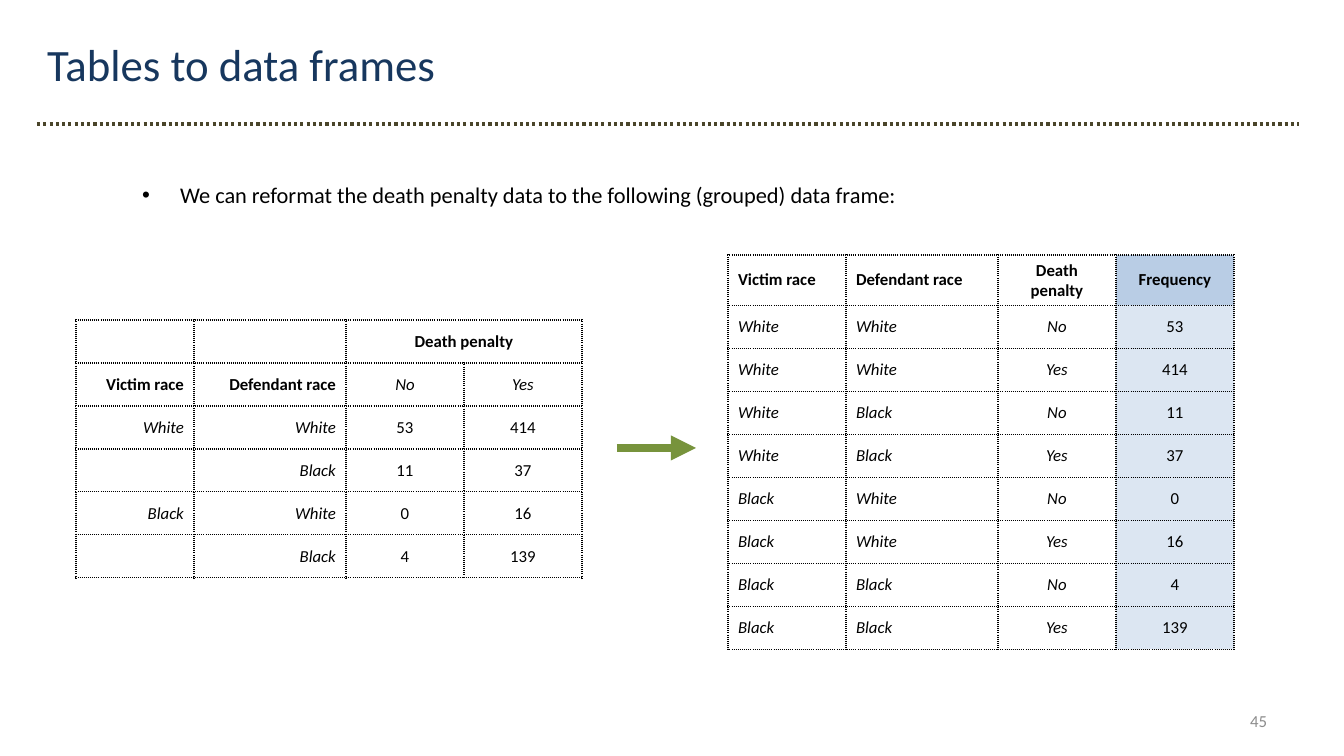
import pptx
import pptx.dml.color
import pptx.enum.dml
import pptx.enum.shapes
import pptx.enum.text
import pptx.oxml
import pptx.oxml.ns
import pptx.util

PX_PER_INCH = 100.8
NAVY = pptx.dml.color.RGBColor(0x17, 0x37, 0x5E)
OLIVE = pptx.dml.color.RGBColor(0x4A, 0x45, 0x2A)
GREEN = pptx.dml.color.RGBColor(0x77, 0x93, 0x3C)
BLACK = pptx.dml.color.RGBColor(0x00, 0x00, 0x00)
GREY = pptx.dml.color.RGBColor(0x8C, 0x8C, 0x8C)
BLUE = pptx.dml.color.RGBColor(0xB9, 0xCD, 0xE5)
PALE_BLUE = pptx.dml.color.RGBColor(0xDC, 0xE6, 0xF2)

ALIGN = pptx.enum.text.PP_ALIGN
MIDDLE = pptx.enum.text.MSO_ANCHOR.MIDDLE
DOTTED = pptx.enum.dml.MSO_LINE.ROUND_DOT

HEADINGS = ("Victim race", "Defendant race", "Death penalty", "Frequency")
COUNTS = {
    ("White", "White"): (53, 414),
    ("White", "Black"): (11, 37),
    ("Black", "White"): (0, 16),
    ("Black", "Black"): (4, 139),
}
COLUMNS = (118, 152, 118, 118)
ROW_HEIGHT = 43


def px(length):
    """Turn whole pixels into EMU."""
    return pptx.util.Inches(length / PX_PER_INCH)


def element(xml):
    """Build a drawing element from its tag, attributes and children."""
    tag, rest = xml[:xml.index(" ")], xml[xml.index(" "):]
    return pptx.oxml.parse_xml(f"<{tag} {pptx.oxml.ns.nsdecls('a')}{rest}")


class DataSlide:
    """Hold the style and the current slide."""

    font = "Calibri"

    def __init__(self, deck):
        """Add a slide with a title and a body."""
        self.slide = deck.slides.add_slide(deck.slide_layouts[1])
        self.shapes = self.slide.shapes

    def style(self, paragraph, size, color, align=ALIGN.LEFT, bold=False, italic=False):
        """Format a whole paragraph."""
        paragraph.alignment = align
        font = paragraph.font
        font.name, font.size = self.font, pptx.util.Pt(size)
        font.bold, font.italic = bold, italic
        font.color.rgb = color

    def place(self, shape, left, top, width, height):
        """Move and size a shape."""
        shape.left, shape.top, shape.width, shape.height = map(px, (left, top, width, height))

    def title(self, wording, *box):
        """Fill the title placeholder."""
        heading = self.shapes.title
        self.place(heading, *box)
        heading.text_frame.text = wording
        heading.text_frame.vertical_anchor = MIDDLE
        heading.text_frame.auto_size = pptx.enum.text.MSO_AUTO_SIZE.SHAPE_TO_FIT_TEXT
        self.style(heading.text_frame.paragraphs[0], 32, NAVY)

    def bullet(self, wording, *box):
        """Fill the body placeholder with one bullet."""
        body = self.slide.placeholders[1]
        self.place(body, *box)
        body.text_frame.text = wording
        body.text_frame.auto_size = pptx.enum.text.MSO_AUTO_SIZE.NONE
        point = body.text_frame.paragraphs[0]
        self.style(point, 16, BLACK)
        properties = point._p.get_or_add_pPr()
        properties.set("marL", str(px(38)))
        properties.set("indent", str(px(-38)))

    def page_number(self, number, *box):
        """Add the page number."""
        frame = self.shapes.add_textbox(*map(px, box)).text_frame
        frame.word_wrap = True
        frame.vertical_anchor = MIDDLE
        frame.text = number
        self.style(frame.paragraphs[0], 12, GREY, ALIGN.RIGHT)

    def line(self, left, right, y, color, width, dash=None, arrow=False):
        """Add a horizontal line, dashed or with an arrowhead if asked."""
        stroke = self.shapes.add_connector(
            pptx.enum.shapes.MSO_CONNECTOR.STRAIGHT, px(left), px(y), px(right), px(y))
        stroke.line.color.rgb = color
        stroke.line.width = pptx.util.Pt(width)
        if dash:
            stroke.line.dash_style = dash
        if arrow:
            stroke.line._get_or_add_ln().append(element('a:tailEnd type="triangle"/>'))
        stroke._element.spPr.append(element("a:effectLst />"))

    def cell(self, cell, wording, align, fill):
        """Fill and frame one table cell."""
        cell.text = wording
        cell.vertical_anchor = MIDDLE
        bold = wording in HEADINGS
        self.style(cell.text_frame.paragraphs[0], 12, BLACK, align, bold,
                   not bold and not wording.isdigit())
        if fill:
            cell.fill.solid()
            cell.fill.fore_color.rgb = fill
        else:
            cell.fill.background()
        properties = cell._tc.get_or_add_tcPr()
        for position, side in enumerate("LRTB"):
            properties.insert(position, element(
                f'a:ln{side} w="{pptx.util.Pt(1)}"><a:solidFill><a:srgbClr val="{BLACK}"/>'
                f'</a:solidFill><a:prstDash val="sysDot"/></a:ln{side}>'))

    def table(self, rows, left, top, aligns, fills=(None, None)):
        """Add a dotted table whose last column takes the head and body fills."""
        grid = self.shapes.add_table(
            len(rows), len(COLUMNS), px(left), px(top),
            px(sum(COLUMNS)), px(ROW_HEIGHT * len(rows))).table
        grid.first_row = grid.horz_banding = False
        for column, width in zip(grid.columns, COLUMNS):
            column.width = px(width)
        for r, row in enumerate(rows):
            grid.rows[r].height = px(ROW_HEIGHT)
            for c, wording in enumerate(row):
                fill = fills[min(r, 1)] if c == len(COLUMNS) - 1 else None
                self.cell(grid.cell(r, c), wording, aligns[c], fill)
        return grid


def main():
    """Build the slide and save it."""
    deck = pptx.Presentation()
    deck.slide_width, deck.slide_height = px(1344), px(756)
    page = DataSlide(deck)
    page.page_number("45", 964, 701, 313, 40)
    page.line(37, 1299, 124, OLIVE, 2.25, dash=DOTTED)
    page.title("Tables to data frames", 37, 32, 1174, 64)
    page.bullet("We can reformat the death penalty data to the following (grouped) data frame:",
                132, 176, 984, 543)

    victim, defendant, penalty, frequency = HEADINGS
    crosstab = [("", "", penalty, ""), (victim, defendant, "No", "Yes")]
    data_frame = [HEADINGS]
    previous = None
    for (victim_race, defendant_race), counts in COUNTS.items():
        shown = "" if victim_race == previous else victim_race
        previous = victim_race
        crosstab.append((shown, defendant_race, *map(str, counts)))
        for verdict, count in zip(("No", "Yes"), counts):
            data_frame.append((victim_race, defendant_race, verdict, str(count)))

    centred = [ALIGN.CENTER] * 2
    contingency = page.table(crosstab, 76, 320, [ALIGN.RIGHT] * 2 + centred)
    contingency.cell(0, 2).merge(contingency.cell(0, 3))
    page.table(data_frame, 728, 255, [ALIGN.LEFT] * 2 + centred, (BLUE, PALE_BLUE))
    page.line(617, 696, 448, GREEN, 6, arrow=True)
    deck.save("out.pptx")


if __name__ == "__main__":
    main()
